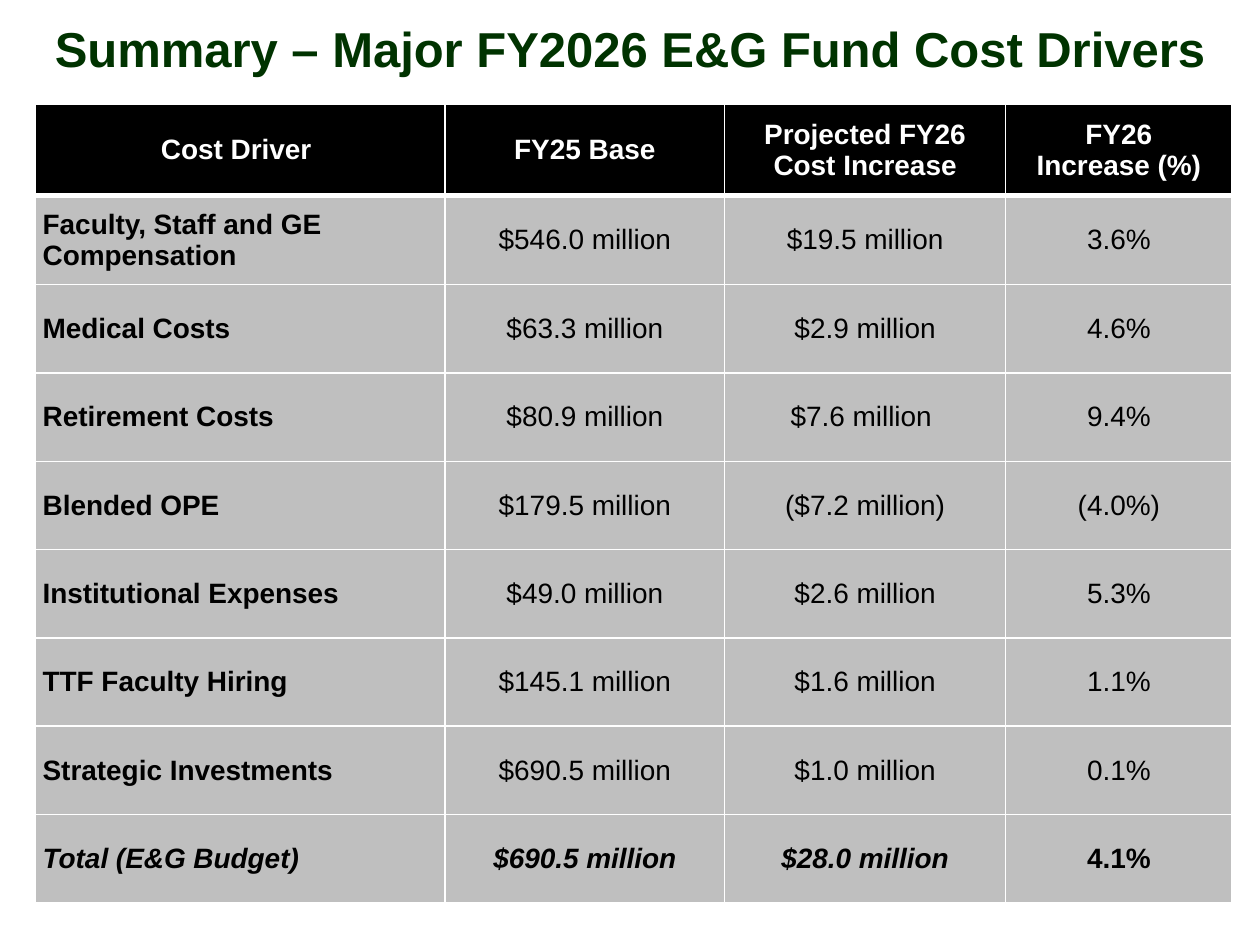
"""Build the slide summarising the major FY2026 E&G Fund cost drivers."""
from lxml import etree
from pptx import Presentation
from pptx import util as u
from pptx.dml.color import RGBColor
from pptx.enum import text
from pptx.oxml import ns

TITLE = "Summary – Major FY2026 E&G Fund Cost Drivers"
HEADER = ("Cost Driver ", "FY25 Base", "Projected FY26\nCost Increase", "FY26\nIncrease (%)")
DRIVERS = [
    ("Faculty, Staff and GE Compensation", "$546.0 million", "$19.5 million", "3.6%"),
    ("Medical Costs", "$63.3 million", "$2.9 million", "4.6%"),
    ("Retirement Costs", "$80.9 million", "$7.6 million ", "9.4%"),
    ("Blended OPE", "$179.5 million", "($7.2 million)", "(4.0%)"),
    ("Institutional Expenses", "$49.0 million", "$2.6 million", "5.3%"),
    ("TTF Faculty Hiring", "$145.1 million", "$1.6 million", "1.1%"),
    ("Strategic Investments", "$690.5 million", "$1.0 million", "0.1%"),
]
TOTAL = ("Total (E&G Budget)", "$690.5 million", "$28.0 million", "4.1%")
ROWS = [HEADER, *DRIVERS, TOTAL]

COLUMN_WIDTHS = (8.26, 5.64, 5.66, 4.57)
ROW_HEIGHTS = [1.83, 1.8] + [1.78] * (len(ROWS) - 2)

FONT = "Arial"
GREEN = RGBColor(0x00, 0x33, 0x00)
BLACK = RGBColor(0x00, 0x00, 0x00)
WHITE = RGBColor(0xFF, 0xFF, 0xFF)
GREY = RGBColor(0xBF, 0xBF, 0xBF)
LEFT, CENTER = text.PP_ALIGN.LEFT, text.PP_ALIGN.CENTER


def write(frame, content, size, color, bold=True, italic=False, align=CENTER):
    for index, line in enumerate(content.split("\n")):
        paragraph = frame.add_paragraph() if index else frame.paragraphs[0]
        paragraph.alignment = align
        run = paragraph.add_run()
        run.text = line
        font = run.font
        font.name, font.size, font.color.rgb = FONT, u.Pt(size), color
        font.bold, font.italic = bold, italic


def set_borders(cell, widths):
    properties = cell._tc.get_or_add_tcPr()
    for side, width in widths.items():
        line = etree.SubElement(properties, ns.qn(f"a:ln{side}"), w=str(u.Pt(width)))
        fill = etree.SubElement(line, ns.qn("a:solidFill"))
        etree.SubElement(fill, ns.qn("a:srgbClr"), val=str(WHITE))


def add_title(slide):
    box = slide.shapes.add_textbox(u.Cm(0.56), u.Cm(0.1), u.Cm(24.28), u.Cm(1.73))
    frame = box.text_frame
    frame.word_wrap = True
    frame.vertical_anchor = text.MSO_ANCHOR.MIDDLE
    frame.margin_left = frame.margin_right = u.Cm(0.18)
    frame.margin_top = frame.margin_bottom = u.Cm(0.1)
    write(frame, TITLE, 28, GREEN)


def add_cost_table(slide):
    table = slide.shapes.add_table(
        len(ROWS), len(HEADER), u.Cm(0.71), u.Cm(2.11),
        u.Cm(sum(COLUMN_WIDTHS)), u.Cm(sum(ROW_HEIGHTS))).table
    table.horz_banding = False
    for column, width in zip(table.columns, COLUMN_WIDTHS):
        column.width = u.Cm(width)
    for row, height, values in zip(table.rows, ROW_HEIGHTS, ROWS):
        row.height = u.Cm(height)
        is_header, is_total = values is HEADER, values is TOTAL
        for index, (cell, value) in enumerate(zip(row.cells, values)):
            top = 3 if values is DRIVERS[0] else 1
            set_borders(cell, {"L": 1, "R": 1, "T": top, "B": 3 if is_header else 1})
            cell.fill.solid()
            cell.fill.fore_color.rgb = BLACK if is_header else GREY
            cell.vertical_anchor = text.MSO_ANCHOR.MIDDLE
            cell.margin_left = cell.margin_right = u.Cm(0.15)
            cell.margin_top = cell.margin_bottom = u.Cm(0.08)
            write(cell.text_frame, value, 16, WHITE if is_header else BLACK,
                  bold=is_header or is_total or index == 0,
                  italic=is_total and index < len(values) - 1,
                  align=LEFT if index == 0 and not is_header else CENTER)


def main():
    presentation = Presentation()
    presentation.slide_width, presentation.slide_height = u.Cm(25.4), u.Cm(19.05)
    slide = presentation.slides.add_slide(presentation.slide_layouts[6])
    add_cost_table(slide)
    add_title(slide)
    presentation.save("out.pptx")


if __name__ == "__main__":
    main()
